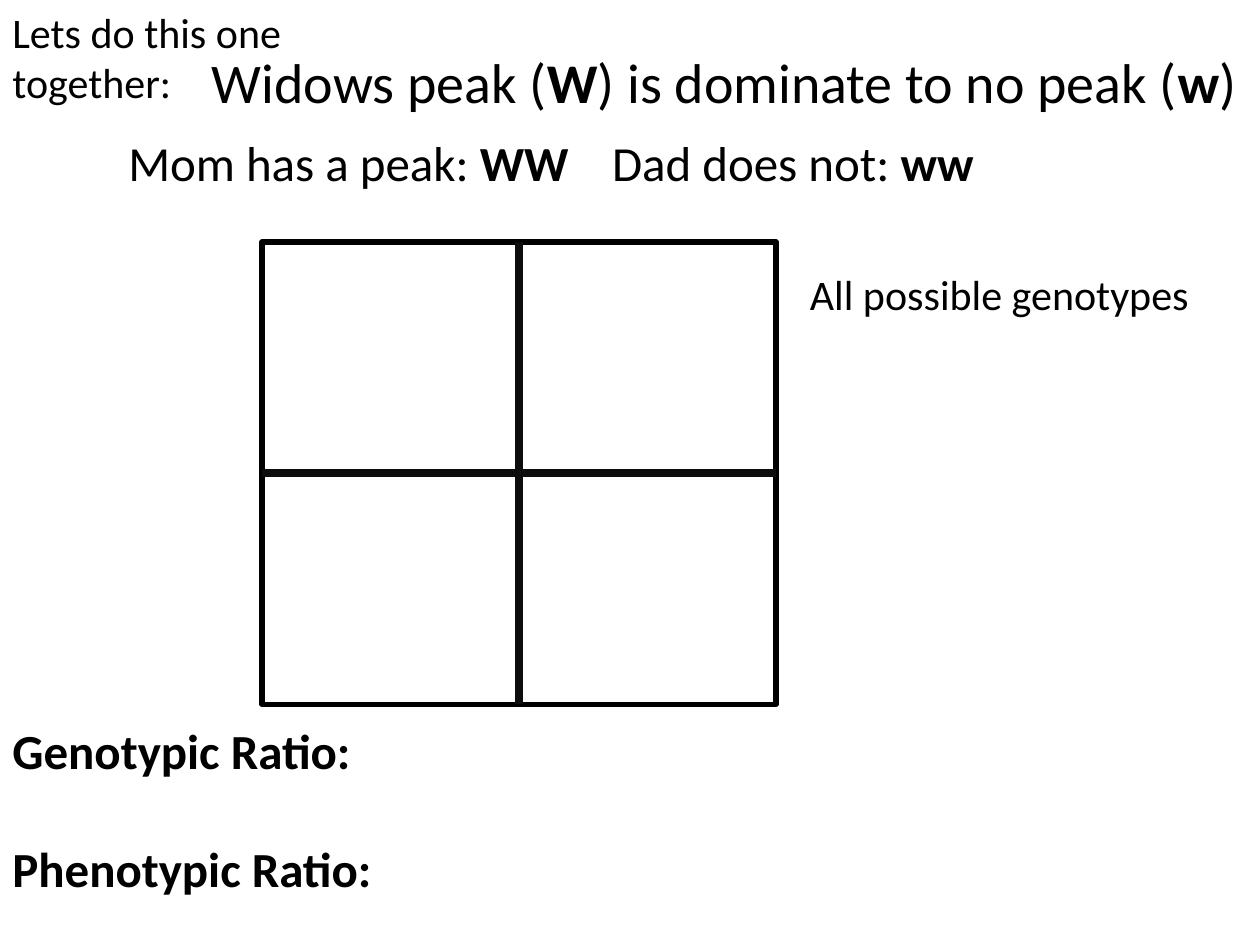
from pptx import Presentation
from pptx.dml.color import RGBColor
from pptx.enum.shapes import MSO_CONNECTOR, MSO_SHAPE
from pptx.enum.text import MSO_ANCHOR, MSO_AUTO_SIZE, PP_ALIGN
from pptx.oxml.ns import qn
from pptx.util import Inches, Pt
from lxml.etree import SubElement

COLORS = {"text": "000000", "frame": "000000", "divider": "0D0D0D", "bg": "FFFFFF"}
FONT = "Calibri"


class SlideBuilder:
    """Holds the style and the current slide, and adds each kind of element."""

    def __init__(self, prs):
        self.slide = prs.slides.add_slide(prs.slide_layouts[5])
        fill = self.slide.background.fill
        fill.solid()
        fill.fore_color.rgb = self.color("bg")

    def color(self, name):
        return RGBColor.from_string(COLORS[name])

    def fill_text(self, sp, paragraphs, size, gap=0):
        tf = sp.text_frame
        tf.word_wrap = True
        tf.auto_size = MSO_AUTO_SIZE.SHAPE_TO_FIT_TEXT
        tf.vertical_anchor = MSO_ANCHOR.TOP
        for i, runs in enumerate(paragraphs):
            p = tf.add_paragraph() if i else tf.paragraphs[0]
            p.alignment = PP_ALIGN.LEFT
            p.space_before = Pt(gap if i else 0)
            for text, bold in runs:
                r = p.add_run()
                r.text = text
                r.font.name = FONT
                r.font.size = Pt(size)
                r.font.bold = bold
                r.font.color.rgb = self.color("text")

    def title(self, x, y, w, h, runs, size):
        sp = self.slide.shapes.title
        sp.left, sp.top, sp.width, sp.height = map(Inches, (x, y, w, h))
        self.fill_text(sp, [runs], size)

    def text(self, x, y, w, h, paragraphs, size, gap=0, tab=None):
        sp = self.slide.shapes.add_textbox(*map(Inches, (x, y, w, h)))
        self.fill_text(sp, paragraphs, size, gap)
        if tab:
            for p in sp.text_frame.paragraphs:
                tabs = SubElement(p._p.get_or_add_pPr(), qn("a:tabLst"))
                SubElement(tabs, qn("a:tab"), pos=str(Inches(tab)), algn="l")

    def divider(self, group, square, start, end):
        line = group.shapes.add_connector(MSO_CONNECTOR.STRAIGHT, 0, 0, 0, 0)
        line.begin_connect(square, start)
        line.end_connect(square, end)
        line.line.color.rgb = self.color("divider")
        line.line.width = Pt(4.5)
        SubElement(line._element.spPr, qn("a:effectLst"))

    def punnett_square(self, x, y, w, h):
        group = self.slide.shapes.add_group_shape()
        sp = group.shapes.add_shape(MSO_SHAPE.RECTANGLE, *map(Inches, (x, y, w, h)))
        sp.shadow.inherit = False
        sp.fill.background()
        sp.line.color.rgb = self.color("frame")
        sp.line.width = Pt(3)
        for start, end in ((0, 2), (1, 3)):
            self.divider(group, sp, start, end)


def main():
    prs = Presentation()
    prs.slide_width, prs.slide_height = Inches(10), Inches(7.5)
    s = SlideBuilder(prs)
    s.text(0, 0, 3.5, 0.91, [[("Lets do this one together:", False)]], 24)
    s.title(1.58, 0.33, 8.42, 0.64, [
        ("Widows peak (", False), ("W", True),
        (") is dominate to no peak (", False), ("w", True), (")", False),
    ], 32)
    s.punnett_square(2.08, 1.92, 4.08, 3.67)
    s.text(0.92, 1, 7.17, 0.57, [[
        ("Mom has a peak: ", False), ("WW", True),
        ("\tDad does not: ", False), ("ww", True),
    ]], 28, tab=3.84)
    s.text(6.33, 2.08, 3.67, 0.5, [[("All possible genotypes", False)]], 24)
    s.text(0, 5.67, 5.58, 1.51,
           [[("Genotypic Ratio:", True)], [("Phenotypic Ratio:", True)]], 28, gap=34)
    prs.save("out.pptx")


if __name__ == "__main__":
    main()
